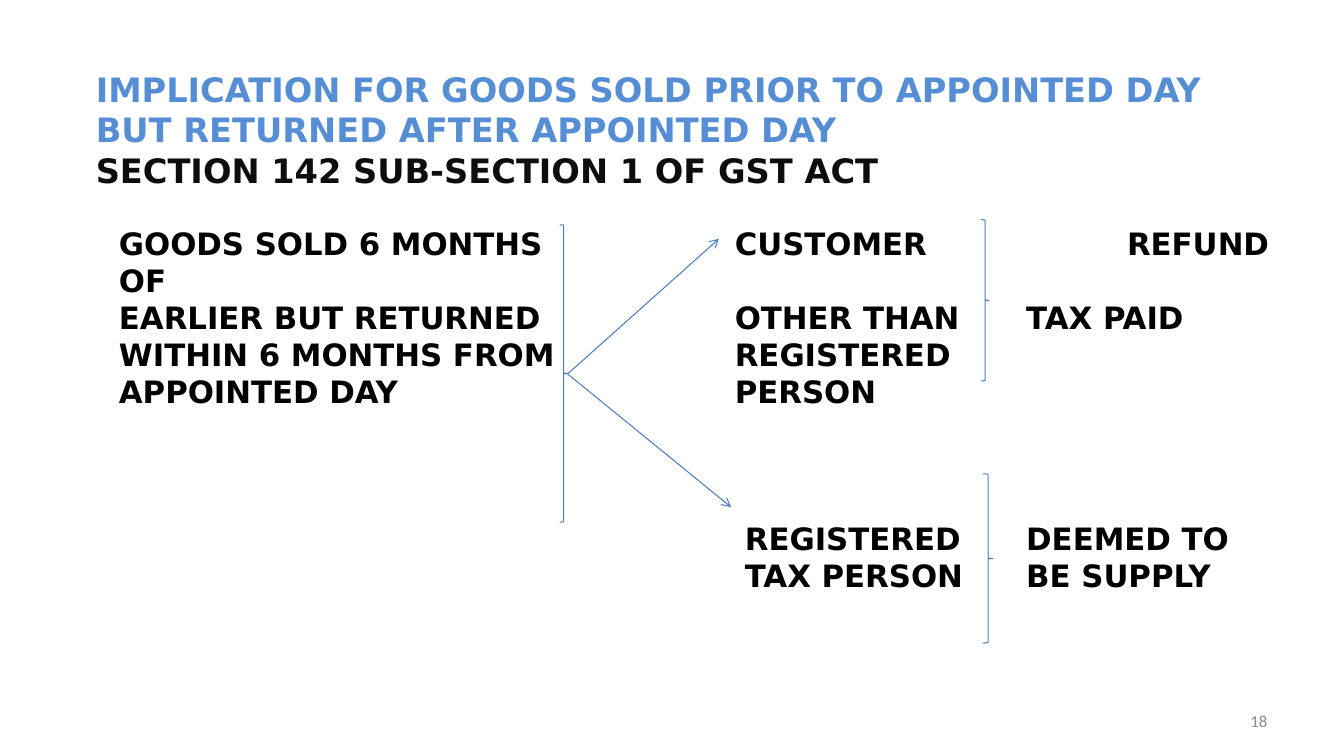
from dataclasses import dataclass

import pptx
import pptx.dml.color
import pptx.enum.shapes
import pptx.enum.text
import pptx.oxml.ns
import pptx.util
from lxml import etree

RGB = pptx.dml.color.RGBColor
ALIGN = pptx.enum.text.PP_ALIGN
ANCHOR = pptx.enum.text.MSO_ANCHOR
BLUE = RGB(0x55, 0x8E, 0xD5)
INK = RGB(0x0D, 0x0D, 0x0D)
BLACK = RGB(0, 0, 0)
GREY = RGB(0x8C, 0x8C, 0x8C)
RULE = RGB(0x4B, 0x7E, 0xBC)
SCALE = 9144  # EMU in one px, 100 px to the inch
LEAD = 26.4  # points from one body line to the next


@dataclass
class Box:
    left: int
    top: int
    width: int
    height: int


@dataclass
class Row:
    text: str
    skip: int = 0  # lines left free above
    indent: int = 0


@dataclass
class Block:
    box: Box
    rows: list[Row]


@dataclass
class Arrow:
    start: tuple[int, int]
    end: tuple[int, int]


GOODS = Block(Box(108, 218, 462, 210), [
    Row("GOODS SOLD 6 MONTHS OF"), Row("EARLIER BUT RETURNED"),
    Row("WITHIN 6 MONTHS FROM"), Row("APPOINTED DAY")])
CASES = [
    Block(Box(719, 218, 254, 210), [
        Row("CUSTOMER"), Row("OTHER THAN", 1), Row("REGISTERED"),
        Row("PERSON")]),
    Block(Box(1008, 218, 288, 210), [
        Row("REFUND", indent=100), Row("TAX PAID", 1)]),
    Block(Box(729, 511, 246, 90), [Row("REGISTERED"), Row("TAX PERSON")]),
    Block(Box(1008, 511, 288, 90), [Row("DEEMED TO"), Row("BE SUPPLY")]),
]
BRACES = [Box(555, 223, 8, 295), Box(973, 218, 8, 160), Box(975, 470, 10, 168)]
TIP = (563, 371)
ARROWS = [Arrow(TIP, (713, 237)), Arrow(TIP, (725, 503))]


def px(size: int) -> int:
    return size * SCALE


def place(shape, box: Box, anchor=ANCHOR.TOP):
    """Move a text shape to its box and return its text frame."""
    shape.left, shape.top = px(box.left), px(box.top)
    shape.width, shape.height = px(box.width), px(box.height)
    frame = shape.text_frame
    frame.word_wrap = True
    frame.auto_size = pptx.enum.text.MSO_AUTO_SIZE.NONE
    frame.vertical_anchor = anchor
    return frame


def write(para, text: str, *, size: int, color: RGB, font: str = "DejaVu Sans",
          bold: bool = True, align=ALIGN.LEFT, lead: float = 1.0,
          before: float = 0) -> None:
    run = para.add_run()
    run.text = text
    run.font.name, run.font.size = font, pptx.util.Pt(size)
    run.font.bold, run.font.color.rgb = bold, color
    para.alignment = align
    para.line_spacing = pptx.util.Pt(lead) if lead > 1 else lead
    para.space_before = pptx.util.Pt(before)


def add_tag(parent, tag: str, **attrs: str) -> None:
    etree.SubElement(parent, pptx.oxml.ns.qn(tag), attrs)


def fill_block(shape, block: Block) -> None:
    frame = place(shape, block.box)
    for index, row in enumerate(block.rows):
        para = frame.add_paragraph() if index else frame.paragraphs[0]
        write(para, row.text, size=22, color=BLACK, lead=LEAD,
              before=row.skip * LEAD)
        props = para._p.get_or_add_pPr()
        props.set("marL", str(px(row.indent)))
        props.set("indent", "0")
        add_tag(props, "a:buNone")


def add_brace(shapes, box: Box) -> None:
    brace = shapes.add_shape(
        pptx.enum.shapes.MSO_SHAPE.RIGHT_BRACE,
        px(box.left), px(box.top), px(box.width), px(box.height))
    brace.shadow.inherit = False
    brace.fill.background()
    brace.line.color.rgb = RULE
    brace.line.width = pptx.util.Pt(0.75)


def add_arrow(shapes, arrow: Arrow) -> None:
    line = shapes.add_connector(
        pptx.enum.shapes.MSO_CONNECTOR.STRAIGHT,
        *map(px, arrow.start), *map(px, arrow.end))
    line.line.color.rgb = RULE
    line.line.width = pptx.util.Pt(0.75)
    add_tag(line.line._get_or_add_ln(), "a:tailEnd", type="arrow")
    add_tag(line._element.spPr, "a:effectLst")


def main() -> None:
    deck = pptx.Presentation()
    deck.slide_width, deck.slide_height = px(1333), px(750)
    slide = deck.slides.add_slide(deck.slide_layouts[1])
    shapes = slide.shapes

    title = place(shapes.title, Box(85, 63, 1165, 131))
    write(title.paragraphs[0],
          "IMPLICATION FOR GOODS SOLD PRIOR TO APPOINTED DAY "
          "BUT RETURNED AFTER APPOINTED DAY",
          size=24, color=BLUE, lead=28.9)
    write(title.add_paragraph(), "SECTION 142 SUB-SECTION 1 OF GST ACT",
          size=24, color=INK, align=ALIGN.JUSTIFY, lead=28.9)

    fill_block(slide.placeholders[1], GOODS)
    for block in CASES:
        fill_block(shapes.add_textbox(0, 0, 0, 0), block)
    for box in BRACES:
        add_brace(shapes, box)
    for arrow in ARROWS:
        add_arrow(shapes, arrow)

    number = place(shapes.add_textbox(0, 0, 0, 0), Box(956, 695, 311, 40),
                   ANCHOR.MIDDLE)
    write(number.paragraphs[0], "18", size=12, color=GREY, font="Calibri",
          bold=False, align=ALIGN.RIGHT)
    deck.save("out.pptx")


if __name__ == "__main__":
    main()
